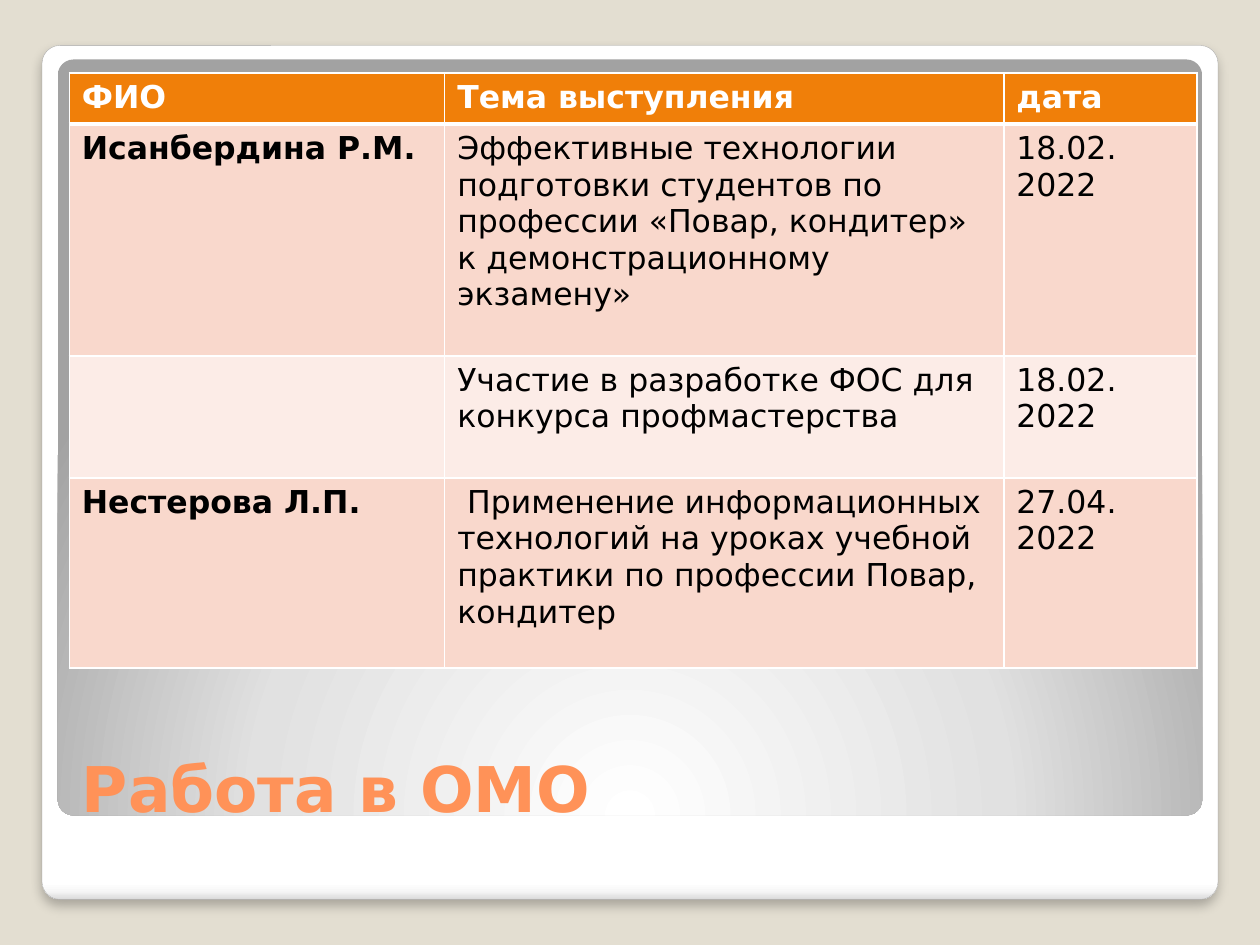
from lxml.etree import SubElement
from pptx import Presentation
from pptx.dml.color import RGBColor
from pptx.enum.shapes import MSO_SHAPE
from pptx.enum.text import MSO_ANCHOR, PP_ALIGN
from pptx.oxml.ns import qn
from pptx.util import Pt

BACKGROUND = RGBColor(0xE3, 0xDE, 0xD1)
WHITE = RGBColor(0xFF, 0xFF, 0xFF)
BLACK = RGBColor(0x00, 0x00, 0x00)
NEAR_WHITE = RGBColor(0xF7, 0xF7, 0xF7)
EDGE_GRAY = RGBColor(0xDA, 0xDA, 0xDA)
LIGHT_GRAY = RGBColor(0xE1, 0xE1, 0xE1)
MIDDLE_GRAY = RGBColor(0xA2, 0xA2, 0xA2)
OUTLINE_GRAY = RGBColor(0xA4, 0xA4, 0xA4)
TITLE_ORANGE = RGBColor(0xFF, 0x92, 0x58)
HEADER_ORANGE = RGBColor(0xF0, 0x7F, 0x09)
BAND_DARK = RGBColor(0xF9, 0xD8, 0xCC)
BAND_LIGHT = RGBColor(0xFC, 0xEC, 0xE7)

COLUMN_WIDTHS = [214.5, 319.5, 110.5]
ROW_HEIGHTS = [29.2, 132.5, 69.7, 108.6]
ROWS = [
    ["ФИО", "Тема выступления", "дата"],
    ["Исанбердина Р.М.",
     "Эффективные технологии подготовки студентов по профессии «Повар, кондитер» "
     "к демонстрационному экзамену»",
     "18.02. 2022"],
    ["", "Участие в разработке ФОС для конкурса профмастерства", "18.02. 2022"],
    ["Нестерова Л.П.",
     "Применение информационных технологий на уроках учебной практики "
     "по профессии Повар, кондитер",
     "27.04.\n2022"],
]


def add_element(parent, tag, **attributes):
    return SubElement(parent, qn(tag), {name: str(value) for name, value in attributes.items()})


class SlideBuilder:
    font_name = "DejaVu Sans"

    def __init__(self, slide):
        self.slide = slide

    def style_font(self, paragraph, size, color, bold):
        font = paragraph.font
        font.name = self.font_name
        font.size = Pt(size)
        font.bold = bold
        font.color.rgb = color

    def background(self, color):
        fill = self.slide.background.fill
        fill.solid()
        fill.fore_color.rgb = color

    def panel(self, left, top, width, height, stops, outline=None):
        shape = self.slide.shapes.add_shape(
            MSO_SHAPE.ROUNDED_RECTANGLE, Pt(left), Pt(top), Pt(width), Pt(height))
        shape.adjustments[0] = 0.021
        shape.shadow.inherit = False
        shape.fill.gradient()
        gradient = shape._element.spPr.find(qn("a:gradFill"))
        for child in list(gradient):
            gradient.remove(child)
        stop_list = add_element(gradient, "a:gsLst")
        for position, color in stops:
            stop = add_element(stop_list, "a:gs", pos=position * 1000)
            add_element(stop, "a:srgbClr", val=color)
        if outline is None:
            shape.line.fill.background()
        else:
            shape.line.color.rgb = outline
            shape.line.width = Pt(0.16)
        return shape, gradient

    def linear_panel(self, *bounds, stops, outline):
        shape, gradient = self.panel(*bounds, stops, outline)
        add_element(gradient, "a:lin", ang=5400000, scaled=0)
        effects = shape._element.spPr.find(qn("a:effectLst"))
        shadow = add_element(effects, "a:outerShdw", blurRad=Pt(6), dist=Pt(4),
                             dir=5400000, algn="ctr", rotWithShape=0)
        color = add_element(shadow, "a:srgbClr", val=BLACK)
        add_element(color, "a:alpha", val=25000)

    def radial_panel(self, *bounds, stops):
        gradient = self.panel(*bounds, stops)[1]
        circle = add_element(gradient, "a:path", path="circle")
        add_element(circle, "a:fillToRect", l=50000, t=175000, r=50000, b=-75000)

    def title(self, text, left, top, width, height):
        title = self.slide.shapes.title
        title.left, title.top, title.width, title.height = map(Pt, (left, top, width, height))
        self.slide.shapes._spTree.append(title._element)
        frame = title.text_frame
        frame.text = text
        frame.word_wrap = True
        frame.vertical_anchor = MSO_ANCHOR.BOTTOM
        paragraph = frame.paragraphs[0]
        paragraph.alignment = PP_ALIGN.LEFT
        self.style_font(paragraph, 36, TITLE_ORANGE, True)

    def cell_borders(self, cell, **widths):
        properties = cell._tc.get_or_add_tcPr()
        for index, side in enumerate("LRTB"):
            line = properties.makeelement(qn(f"a:ln{side}"), {"w": str(Pt(widths.get(side, 1)))})
            add_element(add_element(line, "a:solidFill"), "a:srgbClr", val=WHITE)
            properties.insert(index, line)

    def table(self, rows, left, top, column_widths, row_heights):
        table = self.slide.shapes.add_table(
            len(rows), len(column_widths), Pt(left), Pt(top),
            Pt(sum(column_widths)), Pt(sum(row_heights))).table
        for column, width in zip(table.columns, column_widths):
            column.width = Pt(width)
        for row, height in zip(table.rows, row_heights):
            row.height = Pt(height)
        for row_index, texts in enumerate(rows):
            header = row_index == 0
            band = BAND_DARK if row_index % 2 else BAND_LIGHT
            for column_index, text in enumerate(texts):
                cell = table.cell(row_index, column_index)
                cell.text = text
                cell.fill.solid()
                cell.fill.fore_color.rgb = HEADER_ORANGE if header else band
                self.cell_borders(cell, B=3 if header else 1, T=3 if row_index == 1 else 1)
                for paragraph in cell.text_frame.paragraphs:
                    self.style_font(paragraph, 18, WHITE if header else BLACK,
                                    header or column_index == 0)
        return table


def main():
    presentation = Presentation()
    presentation.slide_width = Pt(720)
    presentation.slide_height = Pt(540)
    builder = SlideBuilder(presentation.slides.add_slide(presentation.slide_layouts[5]))
    builder.background(BACKGROUND)
    builder.linear_panel(
        24, 26, 672, 488, outline=OUTLINE_GRAY,
        stops=[(0, WHITE), (98, WHITE), (99, NEAR_WHITE), (100, EDGE_GRAY)])
    builder.radial_panel(
        33, 34, 654, 432, stops=[(0, WHITE), (55, LIGHT_GRAY), (100, MIDDLE_GRAY)])
    builder.title("Работа в ОМО", 39.6, 392.4, 644.4, 82.8)
    table = builder.table(ROWS, 39.6, 41.7, COLUMN_WIDTHS, ROW_HEIGHTS)
    indented = table.cell(3, 1).text_frame.paragraphs[0]
    indented._p.get_or_add_pPr().set("indent", str(Pt(5.7)))
    presentation.save("out.pptx")


if __name__ == "__main__":
    main()
